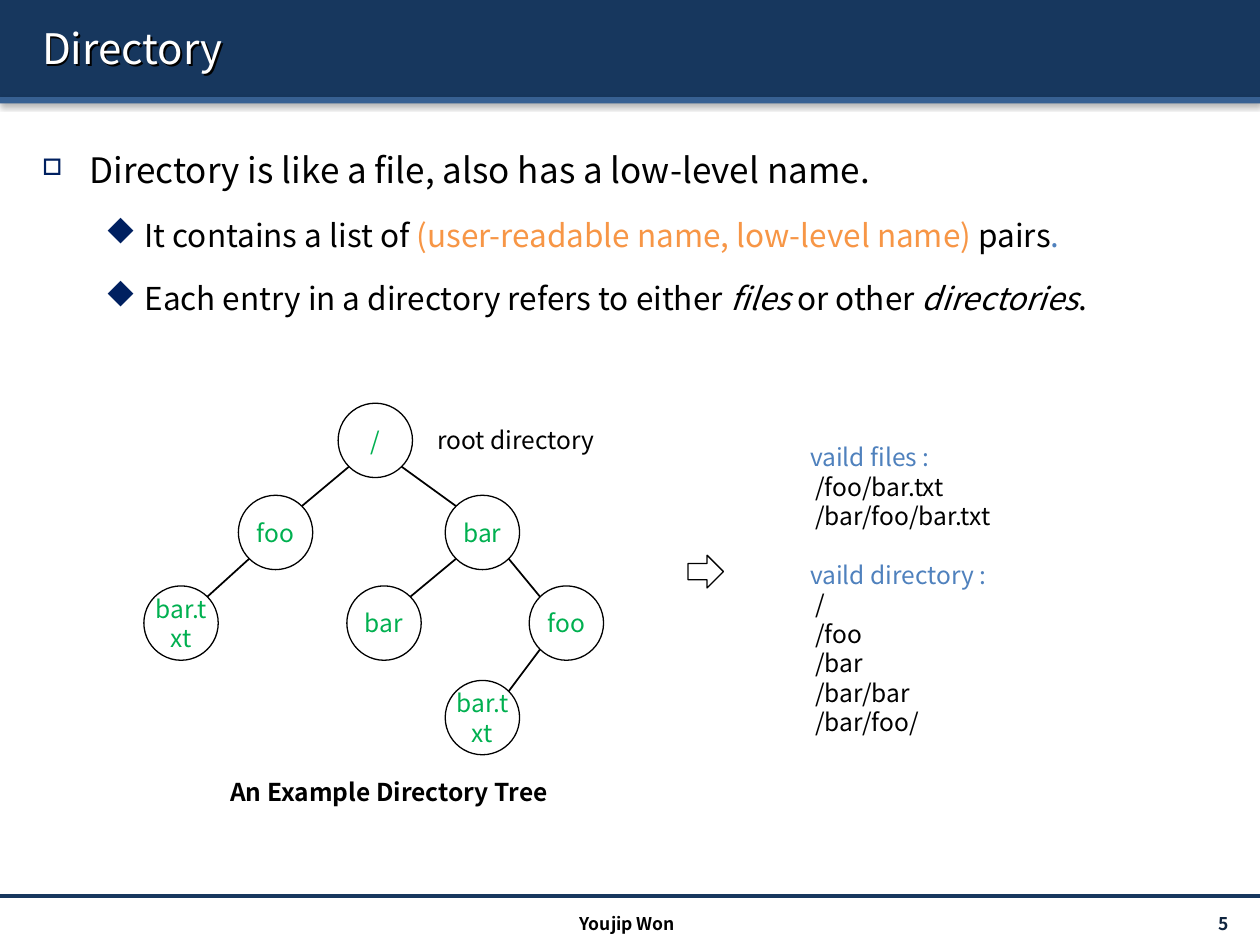
from math import sqrt

from lxml.etree import SubElement
from pptx import Presentation
from pptx.dml.color import RGBColor
from pptx.enum.shapes import MSO_CONNECTOR, MSO_SHAPE
from pptx.enum.text import MSO_ANCHOR, PP_ALIGN
from pptx.oxml import parse_xml
from pptx.oxml.ns import nsdecls, qn
from pptx.util import Pt

FONT = "Noto Sans CJK KR"
BLACK, WHITE, NAVY, BLUE = "000000", "FFFFFF", "17375E", "4F81BD"
ORANGE, GREEN, BULLET = "F79646", "00B050", "002060"
SQUARE, DIAMOND = "o", "u"  # Wingdings characters
NODE = 42.5

# name: (left, top, label, parent)
TREE = {
    "root": (193.2, 230.4, "/", None),
    "foo": (136.2, 283, "foo", "root"),
    "foo_file": (82.2, 334.8, "bar.txt", "foo"),
    "bar": (254.4, 283, "bar", "root"),
    "bar_foo": (302.4, 334.8, "foo", "bar"),
    "bar_bar": (198.2, 334.8, "bar", "bar"),
    "bar_foo_file": (254.4, 388.8, "bar.txt", "bar_foo"),
}
PATHS = {
    "vaild files :": ["/foo/bar.txt", "/bar/foo/bar.txt"],
    "vaild directory :": ["/", "/foo", "/bar", "/bar/bar", "/bar/foo/"],
}


def rgb(color):
    return RGBColor.from_string(color)


def shadow_xml(blur, dist, angle, alpha):
    return parse_xml(
        f'<a:effectLst {nsdecls("a")}><a:outerShdw blurRad="{Pt(blur)}" '
        f'dist="{Pt(dist)}" dir="{angle * 60000}" rotWithShape="0">'
        f'<a:srgbClr val="{BLACK}"><a:alpha val="{alpha * 1000}"/></a:srgbClr>'
        "</a:outerShdw></a:effectLst>")


def add_run(p, text, size, color=BLACK, **fmt):
    r = p.add_run()
    r.text = text
    for name, value in {"name": FONT, "size": Pt(size), **fmt}.items():
        setattr(r.font, name, value)
    r.font.color.rgb = rgb(color)


def add_textbox(shapes, x, y, w, h, anchor=MSO_ANCHOR.TOP):
    sp = shapes.add_textbox(Pt(x), Pt(y), Pt(w), Pt(h))
    sp.text_frame.word_wrap = True
    sp.text_frame.vertical_anchor = anchor
    return sp


def add_label(shapes, box, text, size, color=BLACK, align=PP_ALIGN.LEFT,
              anchor=MSO_ANCHOR.TOP, **fmt):
    sp = add_textbox(shapes, *box, anchor)
    p = sp.text_frame.paragraphs[0]
    p.alignment = align
    add_run(p, text, size, color, **fmt)
    return sp


def add_block(shapes, kind, x, y, w, h, fill=None, line=None):
    sp = shapes.add_shape(kind, Pt(x), Pt(y), Pt(w), Pt(h))
    sp.shadow.inherit = False
    if fill:
        sp.fill.solid()
        sp.fill.fore_color.rgb = rgb(fill)
    else:
        sp.fill.background()
    if line:
        sp.line.color.rgb = rgb(line)
        sp.line.width = Pt(0.75)
    else:
        sp.line.fill.background()
    return sp


def add_bar(shapes, y, h, color):
    sp = add_block(shapes, MSO_SHAPE.RECTANGLE, 0, y, 720, h, color)
    empty = sp._element.spPr.find(qn("a:effectLst"))
    empty.getparent().replace(empty, shadow_xml(3.1, 1.6, 90, 38))


def add_line(shapes, x1, y1, x2, y2, color, width):
    cx = shapes.add_connector(MSO_CONNECTOR.STRAIGHT, Pt(x1), Pt(y1), Pt(x2), Pt(y2))
    cx.line.color.rgb = rgb(color)
    cx.line.width = Pt(width)
    SubElement(cx._element.spPr, qn("a:effectLst"))


def add_bullet(p, char, left, hang, before, percent=100):
    p.line_spacing = 1.5
    p.space_before = Pt(before)
    pPr = p._p.get_or_add_pPr()
    pPr.set("marL", str(Pt(left)))
    pPr.set("indent", str(Pt(-hang)))
    SubElement(SubElement(pPr, qn("a:buClr")), qn("a:srgbClr")).set("val", BULLET)
    SubElement(pPr, qn("a:buSzPct")).set("val", str(percent * 1000))
    font = SubElement(pPr, qn("a:buFont"))
    font.set("typeface", "Wingdings")
    font.set("charset", "2")
    SubElement(pPr, qn("a:buChar")).set("char", char)


def add_node(shapes, x, y, text):
    sp = add_block(shapes, MSO_SHAPE.OVAL, x, y, NODE, NODE, WHITE, BLACK)
    tf = sp.text_frame
    tf.word_wrap = True
    tf.vertical_anchor = MSO_ANCHOR.MIDDLE
    tf.margin_left = tf.margin_right = 0
    p = tf.paragraphs[0]
    p.alignment = PP_ALIGN.CENTER
    add_run(p, text, 14, GREEN)


def add_edge(shapes, parent, child):
    """Join the lower diagonal of the parent to the upper one of the child."""
    reach = NODE / 2 / sqrt(2)
    side = 1 if child[0] > parent[0] else -1
    (x1, y1), (x2, y2) = [(n[0] + NODE / 2, n[1] + NODE / 2) for n in (parent, child)]
    add_line(shapes, x1 + side * reach, y1 + reach,
             x2 - side * reach, y2 - reach, BLACK, 1)


def add_body(shapes):
    tf = add_textbox(shapes, 17, 69.6, 692, 433).text_frame
    p = tf.paragraphs[0]
    add_bullet(p, SQUARE, 27, 27, 0, 65)
    add_run(p, "Directory is like a file, also has a low-level name.", 20)
    points = [
        [("It contains a list of ", {}),
         ("(user-readable name, low-level name)", {"color": ORANGE}),
         (" pairs", {}), (".", {"color": BLUE})],
        [("Each entry in a directory refers to either ", {}),
         ("files", {"italic": True}), (" or other ", {}),
         ("directories", {"italic": True}), (".", {})],
    ]
    for runs in points:
        p = tf.add_paragraph()
        p.level = 1
        add_bullet(p, DIAMOND, 58.5, 22.5, 3.6)
        for text, fmt in runs:
            add_run(p, text, 18, **fmt)


def add_tree(shapes):
    group = shapes.add_group_shape().shapes
    for x, y, text, _ in TREE.values():
        add_node(group, x, y, text)
    for node in TREE.values():
        if node[3]:
            add_edge(group, TREE[node[3]], node)
    add_label(group, (242.8, 239.5, 108, 24.5), "root directory", 14)


def add_paths(shapes):
    tf = add_textbox(shapes, 455.8, 249.2, 164, 194).text_frame
    p = tf.paragraphs[0]
    for i, (heading, names) in enumerate(PATHS.items()):
        if i:
            p = tf.add_paragraph()
            p.space_before = Pt(16.8)
        add_run(p, heading, 14, BLUE)
        for name in names:
            p = tf.add_paragraph()
            p._p.get_or_add_pPr().set("marL", str(Pt(3)))
            add_run(p, name, 14)


def main():
    prs = Presentation()
    prs.slide_width, prs.slide_height = Pt(720), Pt(540)
    s = prs.slides.add_slide(prs.slide_layouts[6])
    shapes = s.shapes

    # Header and footer rule
    add_bar(shapes, 0, 55.5, NAVY)
    add_bar(shapes, 55.5, 3.6, "376092")
    add_line(shapes, 0, 512, 720, 512, NAVY, 2)
    title = add_label(shapes, (17, 4.3, 692, 46), "Directory", 24, WHITE,
                      anchor=MSO_ANCHOR.MIDDLE)
    title._element.spPr.append(shadow_xml(0, 1.5, 45, 100))

    # Bulleted text
    add_body(shapes)

    # Footer
    add_label(shapes, (627, 519, 82, 17.3), "5", 10, "0F243E",
              PP_ALIGN.RIGHT, MSO_ANCHOR.MIDDLE, bold=True)
    add_label(shapes, (239, 518.4, 239, 17.3), "Youjip Won", 10,
              align=PP_ALIGN.CENTER, bold=True)

    # Directory tree and the paths it gives
    add_label(shapes, (92, 440.6, 260.6, 24.5), "An Example Directory Tree", 14,
              align=PP_ALIGN.CENTER, bold=True)
    add_tree(shapes)
    add_paths(shapes)
    add_block(shapes, MSO_SHAPE.RIGHT_ARROW, 393.2, 317.3, 20.2, 18.7, line=BLACK)

    prs.save("out.pptx")


if __name__ == "__main__":
    main()
